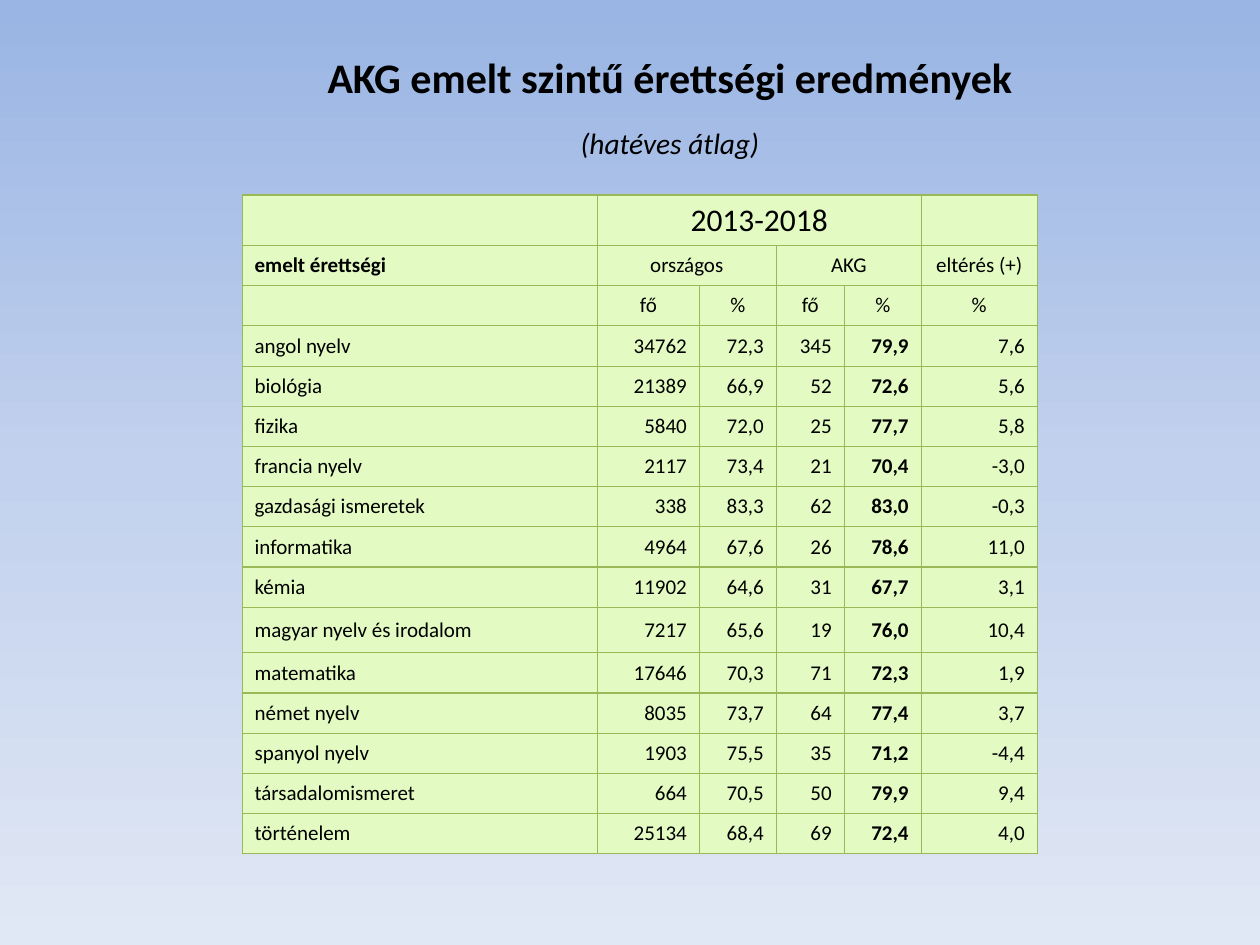
from dataclasses import dataclass

from lxml.etree import SubElement
from pptx import Presentation
from pptx.dml.color import RGBColor
from pptx.enum.text import MSO_ANCHOR, PP_ALIGN
from pptx.oxml import parse_xml
from pptx.oxml.ns import nsdecls, qn
from pptx.slide import Slide
from pptx.table import Table, _Cell
from pptx.util import Cm, Pt

FONT = "Calibri"
COLORS = {
    "text": "000000",
    "cell": "E3FBC2",
    "border": "98B955",
    "sky_top": "9AB5E4",
    "sky_middle": "C2D1ED",
    "sky_bottom": "E1E8F5",
}
COLUMN_WIDTHS = [7.16, 2.06, 1.55, 1.37, 1.55, 2.34]
ROW_HEIGHT = 0.81
HEADER_HEIGHT = 1.02
TALL_ROW_HEIGHT = 0.92
TALL_SUBJECT = "magyar nyelv és irodalom"
AKG_PERCENT_COLUMN = 4


@dataclass
class Heading:
    text: str
    size: float
    bold: bool = False
    italic: bool = False
    space_before: float = 0


@dataclass
class Result:
    subject: str
    national_count: str
    national_percent: str
    akg_count: str
    akg_percent: str
    difference: str

    def values(self) -> list[str]:
        return [self.subject, self.national_count, self.national_percent,
                self.akg_count, self.akg_percent, self.difference]


HEADINGS = [
    Heading("AKG emelt szintű érettségi eredmények", 24, bold=True),
    Heading("(hatéves átlag)", 16.8, italic=True, space_before=13.4),
]
HEADER_ROWS = [
    ["", "2013-2018", "", "", "", ""],
    ["emelt érettségi", "országos", "", "AKG", "", "eltérés (+)"],
    ["", "fő", "%", "fő", "%", "%"],
]
# Merged header cells: row, first column, last column
HEADER_SPANS = [(0, 1, 4), (1, 1, 2), (1, 3, 4)]
RESULTS = [
    Result("angol nyelv", "34762", "72,3", "345", "79,9", "7,6"),
    Result("biológia", "21389", "66,9", "52", "72,6", "5,6"),
    Result("fizika", "5840", "72,0", "25", "77,7", "5,8"),
    Result("francia nyelv", "2117", "73,4", "21", "70,4", "-3,0"),
    Result("gazdasági ismeretek", "338", "83,3", "62", "83,0", "-0,3"),
    Result("informatika", "4964", "67,6", "26", "78,6", "11,0"),
    Result("kémia", "11902", "64,6", "31", "67,7", "3,1"),
    Result(TALL_SUBJECT, "7217", "65,6", "19", "76,0", "10,4"),
    Result("matematika", "17646", "70,3", "71", "72,3", "1,9"),
    Result("német nyelv", "8035", "73,7", "64", "77,4", "3,7"),
    Result("spanyol nyelv", "1903", "75,5", "35", "71,2", "-4,4"),
    Result("társadalomismeret", "664", "70,5", "50", "79,9", "9,4"),
    Result("történelem", "25134", "68,4", "69", "72,4", "4,0"),
]


def format_paragraph(paragraph, size: float, align, bold=False, italic=False) -> None:
    paragraph.alignment = align
    for span in paragraph.runs:
        span.font.name = FONT
        span.font.size = Pt(size)
        span.font.bold = bold
        span.font.italic = italic
        span.font.color.rgb = RGBColor.from_string(COLORS["text"])
    if not paragraph.runs:
        # An empty cell still needs its text size, or it stretches the row
        SubElement(paragraph._p, qn("a:endParaRPr"), sz=str(size * 100))


def paint_background(page: Slide) -> None:
    stops = "".join(
        f'<a:gs pos="{position * 1000}"><a:srgbClr val="{COLORS[name]}"/></a:gs>'
        for position, name in [(0, "sky_top"), (50, "sky_middle"), (100, "sky_bottom")]
    )
    background = parse_xml(
        f'<p:bg {nsdecls("p", "a")}><p:bgPr><a:gradFill><a:gsLst>{stops}</a:gsLst>'
        '<a:lin ang="5400000" scaled="0"/></a:gradFill><a:effectLst/></p:bgPr></p:bg>'
    )
    page.element.cSld.insert(0, background)


def add_headings(page: Slide) -> None:
    box = page.shapes.add_textbox(Cm(5.49), Cm(0.91), Cm(16.03), Cm(1.8))
    frame = box.text_frame
    frame.word_wrap = True
    frame.text = "\n".join(heading.text for heading in HEADINGS)
    for paragraph, heading in zip(frame.paragraphs, HEADINGS):
        paragraph.space_before = Pt(heading.space_before)
        format_paragraph(paragraph, heading.size, PP_ALIGN.CENTER,
                         heading.bold, heading.italic)


def style_cell(cell: _Cell) -> None:
    cell.vertical_anchor = MSO_ANCHOR.MIDDLE
    cell.fill.solid()
    cell.fill.fore_color.rgb = RGBColor.from_string(COLORS["cell"])
    properties = cell._tc.get_or_add_tcPr()
    for index, side in enumerate(["lnL", "lnR", "lnT", "lnB"]):
        properties.insert(index, parse_xml(
            f'<a:{side} {nsdecls("a")} w="{Pt(0.75)}"><a:solidFill>'
            f'<a:srgbClr val="{COLORS["border"]}"/></a:solidFill></a:{side}>'
        ))


def fill_table(table: Table, rows: list[list[str]]) -> None:
    for row_index, values in enumerate(rows):
        is_header = row_index < len(HEADER_ROWS)
        for column_index, text in enumerate(values):
            cell = table.cell(row_index, column_index)
            cell.text_frame.text = text
            style_cell(cell)
            if column_index == 0:
                align = PP_ALIGN.LEFT
            else:
                align = PP_ALIGN.CENTER if is_header else PP_ALIGN.RIGHT
            bold_column = 0 if is_header else AKG_PERCENT_COLUMN
            format_paragraph(cell.text_frame.paragraphs[0],
                             18 if row_index == 0 else 12, align,
                             bold=column_index == bold_column)


def add_results(page: Slide) -> None:
    rows = HEADER_ROWS + [result.values() for result in RESULTS]
    heights = [TALL_ROW_HEIGHT if row[0] == TALL_SUBJECT else ROW_HEIGHT for row in rows]
    heights[0] = HEADER_HEIGHT
    table = page.shapes.add_table(
        len(rows), len(COLUMN_WIDTHS), Cm(4.88), Cm(3.93),
        Cm(sum(COLUMN_WIDTHS)), Cm(sum(heights)),
    ).table
    table.first_row = False
    table.horz_banding = False
    for column, width in zip(table.columns, COLUMN_WIDTHS):
        column.width = Cm(width)
    for row, height in zip(table.rows, heights):
        row.height = Cm(height)
    fill_table(table, rows)
    for row_index, first, last in HEADER_SPANS:
        table.cell(row_index, first).merge(table.cell(row_index, last))


def main() -> None:
    deck = Presentation()
    deck.slide_width, deck.slide_height = Cm(25.4), Cm(19.05)
    page = deck.slides.add_slide(deck.slide_layouts[6])
    paint_background(page)
    add_headings(page)
    add_results(page)
    deck.save("out.pptx")


if __name__ == "__main__":
    main()
